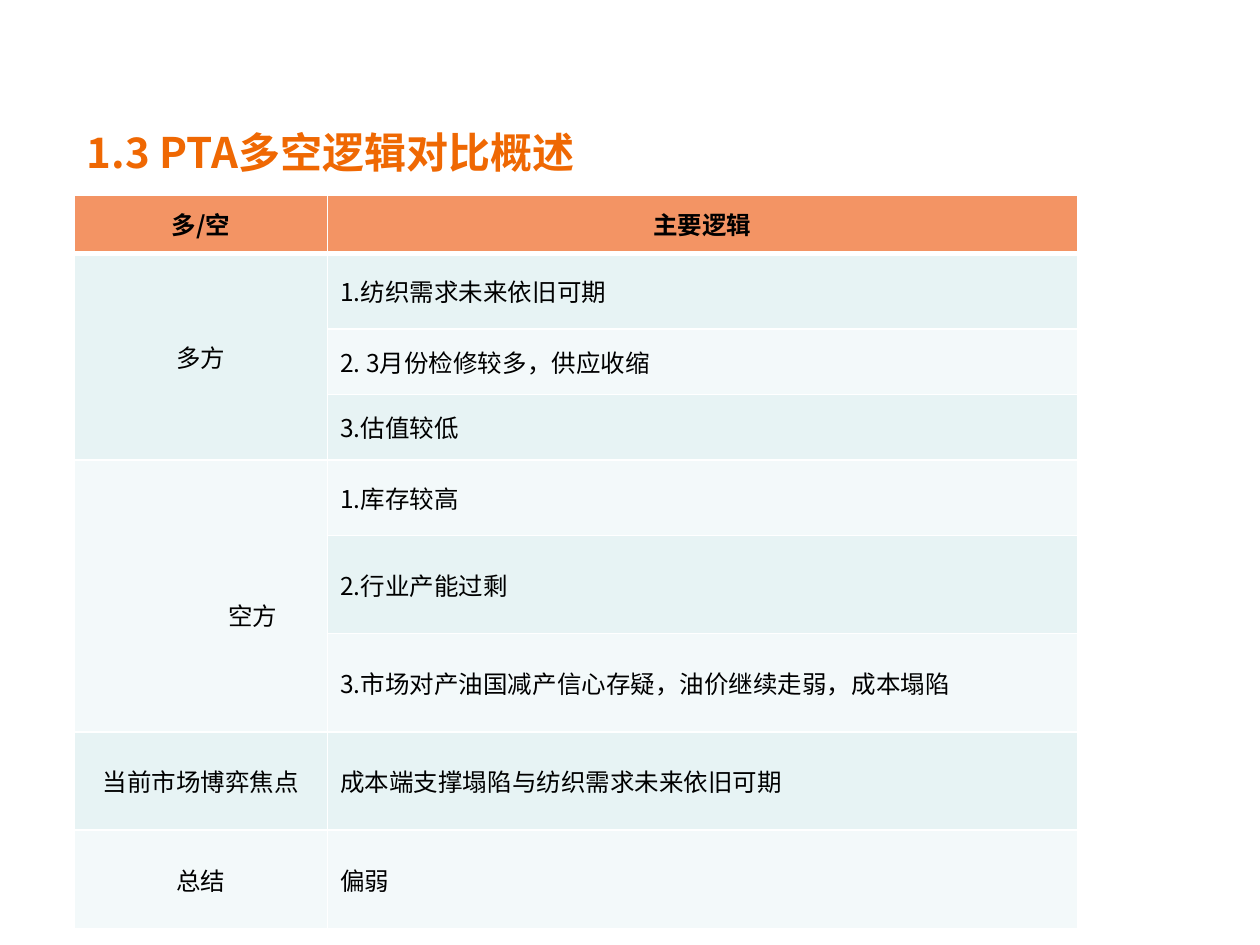
from lxml import etree
from pptx import Presentation
from pptx.dml.color import RGBColor
from pptx.enum import text
from pptx.oxml.ns import qn
from pptx.util import Inches, Pt

FONT = "Noto Sans CJK SC"
HEADER = ("多/空", "主要逻辑")
GROUPS = [
    ("多方", ["1.纺织需求未来依旧可期", "2. 3月份检修较多，供应收缩", "3.估值较低"]),
    ("空方", ["1.库存较高", "2.行业产能过剩",
            "3.市场对产油国减产信心存疑，油价继续走弱，成本塌陷"]),
    ("当前市场博弈焦点", ["成本端支撑塌陷与纺织需求未来依旧可期"]),
    ("总结", ["偏弱"]),
]
COL_WIDTHS = (2.01, 5.95)
ROW_HEIGHTS = (0.46, 0.6, 0.52, 0.52, 0.6, 0.78, 0.78, 0.78, 0.78)


def color(hex_string):
    return RGBColor.from_string(hex_string)


def write(tf, content, size, hex_color, bold=False, align=None):
    tf.text = content
    p = tf.paragraphs[0]
    p.alignment = align
    r = p.runs[0]
    r.font.size, r.font.bold, r.font.name = Pt(size), bold, FONT
    r.font.color.rgb = color(hex_color)
    etree.SubElement(r.font._element, qn("a:ea"), typeface=FONT)


def set_borders(cell, top=1, bottom=1):
    tcPr = cell._tc.get_or_add_tcPr()
    for side, width in (("L", 1), ("R", 1), ("T", top), ("B", bottom)):
        ln = etree.SubElement(tcPr, qn(f"a:ln{side}"), w=str(Pt(width)))
        fill = etree.SubElement(ln, qn("a:solidFill"))
        etree.SubElement(fill, qn("a:srgbClr"), val="FFFFFF")


def add_title(s, left, top, width, height):
    sp = s.shapes.title
    sp.left, sp.top, sp.width, sp.height = map(Inches, (left, top, width, height))
    sp.text_frame.vertical_anchor = text.MSO_ANCHOR.MIDDLE
    write(sp.text_frame, "1.3 PTA多空逻辑对比概述", 24, "EF6803", True, text.PP_ALIGN.LEFT)


def add_logic_table(s, left, top, width, height):
    table = s.shapes.add_table(len(ROW_HEIGHTS), len(COL_WIDTHS),
                               *map(Inches, (left, top, width, height))).table
    for column, w in zip(table.columns, COL_WIDTHS):
        column.width = Inches(w)
    for row, h in zip(table.rows, ROW_HEIGHTS):
        row.height = Inches(h)

    # Borders and banded fills
    for i, row in enumerate(table.rows):
        for cell in row.cells:
            set_borders(cell, 3 if i == 1 else 1, 3 if i == 0 else 1)
            cell.fill.solid()
            band = "E7F3F4" if i % 2 else "F3F9FA"
            cell.fill.fore_color.rgb = color(band if i else "F39464")
            cell.vertical_anchor = text.MSO_ANCHOR.MIDDLE

    # Header
    for j, label in enumerate(HEADER):
        write(table.cell(0, j).text_frame, label, 14, "000000", True, text.PP_ALIGN.CENTER)

    # Sides and their arguments
    i = 1
    for side, points in GROUPS:
        cell = table.cell(i, 0)
        if len(points) > 1:
            cell.merge(table.cell(i + len(points) - 1, 0))
        write(cell.text_frame, side, 14, "000000", align=text.PP_ALIGN.CENTER)
        if side == "空方":  # label sits right of and below the cell centre
            cell.margin_left, cell.margin_top = Inches(0.92), Inches(0.35)
        for k, point in enumerate(points):
            write(table.cell(i + k, 1).text_frame, point, 14, "000000")
        i += len(points)


def main():
    prs = Presentation()
    prs.slide_width, prs.slide_height = Inches(10), Inches(7.5)
    s = prs.slides.add_slide(prs.slide_layouts[5])
    add_title(s, 0.59, 0.76, 8.36, 0.89)
    add_logic_table(s, 0.59, 1.55, 7.95, 5.83)
    prs.save("out.pptx")


if __name__ == "__main__":
    main()
